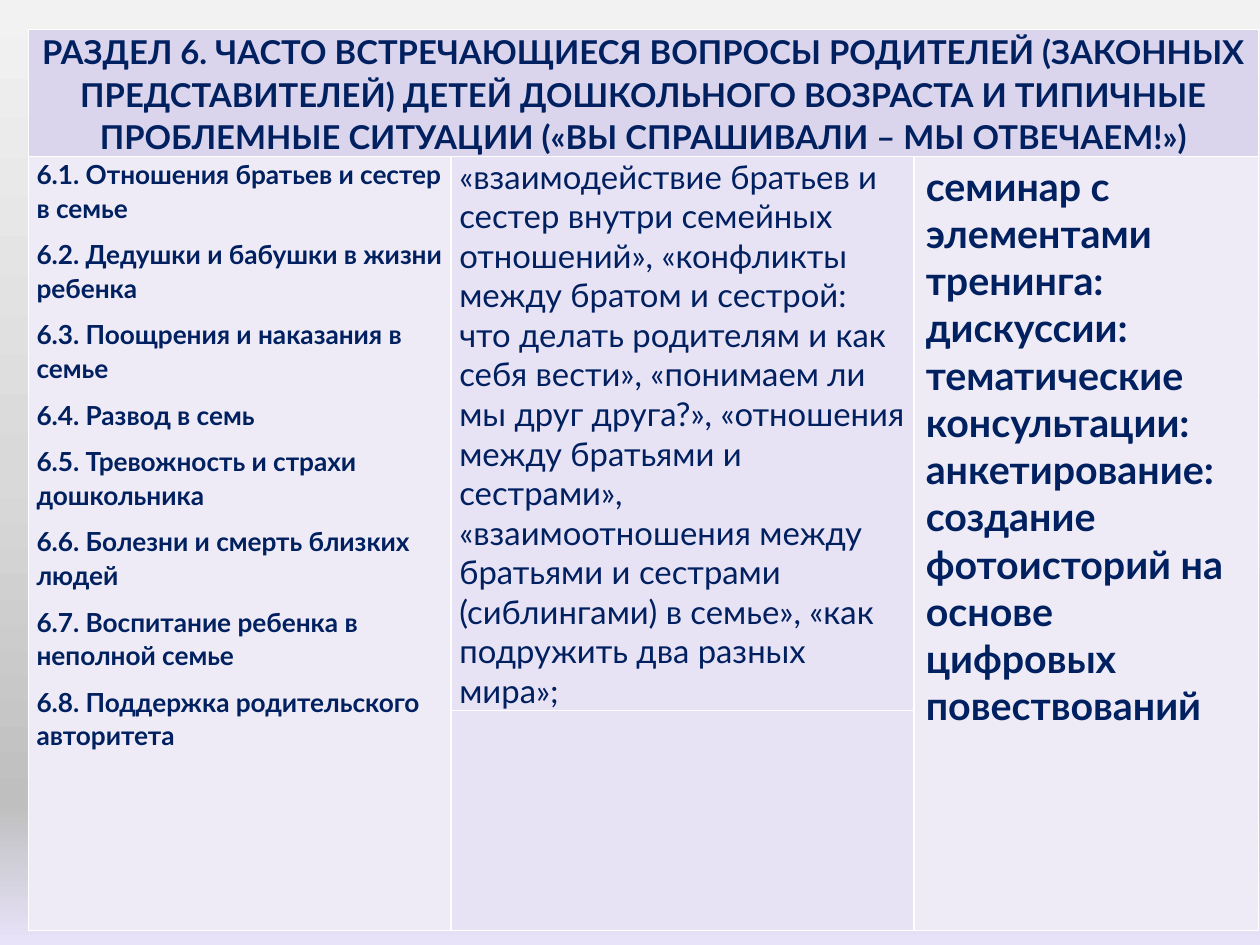
"""Builds the slide with section 6 of the programme for parents of preschoolers."""
from dataclasses import dataclass
from typing import Optional

from lxml import etree
from pptx import Presentation
from pptx.dml.color import RGBColor
from pptx.enum.text import PP_ALIGN
from pptx.oxml.ns import qn
from pptx.util import Inches, Pt

LEFT, CENTER, JUSTIFY = PP_ALIGN.LEFT, PP_ALIGN.CENTER, PP_ALIGN.JUSTIFY
FONT = "Lato"
COLORS = {"text": "002060", "header": "DAD5ED", "outer": "EEEBF6",
          "middle": "E8E2F5", "border": "FFFFFF"}
BACKDROP = ((0, "F2F2F2"), (50, "D9D9D9"), (85, "BFBFBF"), (100, "E8E3F9"))
SLIDE_W, SLIDE_H = Inches(10.67), Inches(8)
TABLE_LEFT, TABLE_TOP = Inches(0.24), Inches(0.25)
COLUMNS = (3.58, 3.92, 2.92)
ROWS = (0.96, 3.28, 1.86)


@dataclass(frozen=True)
class Line:
    text: str
    align: PP_ALIGN = LEFT


@dataclass(frozen=True)
class Block:
    row: int
    col: int
    fill: str
    lines: tuple[Line, ...] = ()
    size: int = 20
    bold: bool = True
    rows: int = 1
    cols: int = 1
    tight: bool = True
    spacing: Optional[float] = None
    after: int = 0


TOPICS = (
    Line("6.1. Отношения братьев и сестер в семье"),
    Line("6.2. Дедушки и бабушки в жизни ребенка"),
    Line("6.3. Поощрения и наказания в семье"),
    Line("6.4. Развод в семь", JUSTIFY),
    Line("6.5. Тревожность и страхи дошкольника"),
    Line("6.6. Болезни и смерть близких людей"),
    Line("6.7. Воспитание ребенка в неполной семье"),
    Line("6.8. Поддержка родительского авторитета"),
)
QUESTIONS = (Line(
    "«взаимодействие братьев и сестер внутри семейных отношений», "
    "«конфликты между братом и сестрой: что делать родителям и как себя вести», "
    "«понимаем ли мы друг друга?», «отношения между братьями и сестрами», "
    "«взаимоотношения между братьями и сестрами (сиблингами) в семье», "
    "«как подружить два разных мира»;"),)
FORMATS = (
    Line("семинар с элементами тренинга:"),
    Line("дискуссии:"),
    Line("тематические консультации:"),
    Line("анкетирование:"),
    Line("создание фотоисторий на основе цифровых повествований"),
)
SECTION = (Line(
    "РАЗДЕЛ 6. ЧАСТО ВСТРЕЧАЮЩИЕСЯ ВОПРОСЫ РОДИТЕЛЕЙ (ЗАКОННЫХ ПРЕДСТАВИТЕЛЕЙ) "
    "ДЕТЕЙ ДОШКОЛЬНОГО ВОЗРАСТА И ТИПИЧНЫЕ ПРОБЛЕМНЫЕ СИТУАЦИИ "
    "(«ВЫ СПРАШИВАЛИ – МЫ ОТВЕЧАЕМ!»)", CENTER),)
BLOCKS = (
    Block(0, 0, "header", SECTION, cols=3, spacing=1.07, after=8),
    Block(1, 0, "outer", TOPICS, size=16, rows=2, spacing=1.07, after=8),
    Block(1, 1, "middle", QUESTIONS, bold=False),
    Block(1, 2, "outer", FORMATS, size=24, rows=2, tight=False),
    Block(2, 1, "middle"),
)


def paint_backdrop(slide) -> None:
    fill = slide.background.fill
    fill.gradient()
    fill.gradient_angle = 270
    stops = slide.element.find(".//" + qn("a:gsLst"))
    for stop in list(stops):
        stops.remove(stop)
    for share, color in BACKDROP:
        stop = etree.SubElement(stops, qn("a:gs"), pos=str(share * 1000))
        etree.SubElement(stop, qn("a:srgbClr"), val=color)


def style_cell(cell, fill: str) -> None:
    properties = cell._tc.get_or_add_tcPr()
    for side in ("lnL", "lnR", "lnT", "lnB"):
        border = etree.SubElement(properties, qn(f"a:{side}"), w=str(Pt(1)))
        solid = etree.SubElement(border, qn("a:solidFill"))
        etree.SubElement(solid, qn("a:srgbClr"), val=COLORS["border"])
    cell.fill.solid()
    cell.fill.fore_color.rgb = RGBColor.from_string(COLORS[fill])


def fill_block(table, block: Block) -> None:
    for row in range(block.row, block.row + block.rows):
        for col in range(block.col, block.col + block.cols):
            style_cell(table.cell(row, col), block.fill)
    cell = table.cell(block.row, block.col)
    if block.rows * block.cols > 1:
        cell.merge(table.cell(block.row + block.rows - 1, block.col + block.cols - 1))
    if block.tight:
        cell.margin_left = cell.margin_right = Inches(0.07)
        cell.margin_top = cell.margin_bottom = 0
    for index, line in enumerate(block.lines):
        frame = cell.text_frame
        paragraph = frame.add_paragraph() if index else frame.paragraphs[0]
        paragraph.alignment = line.align
        paragraph.line_spacing = block.spacing
        paragraph.space_after = Pt(block.after)
        run = paragraph.add_run()
        run.text = line.text
        run.font.name = FONT
        run.font.size = Pt(block.size)
        run.font.bold = block.bold
        run.font.color.rgb = RGBColor.from_string(COLORS["text"])


def main() -> None:
    deck = Presentation()
    deck.slide_width, deck.slide_height = SLIDE_W, SLIDE_H
    slide = deck.slides.add_slide(deck.slide_layouts[6])
    paint_backdrop(slide)
    frame = slide.shapes.add_table(len(ROWS), len(COLUMNS), TABLE_LEFT, TABLE_TOP,
                                   Inches(sum(COLUMNS)), Inches(sum(ROWS)))
    programme = frame.table
    programme.first_row = programme.horz_banding = False
    for column, width in zip(programme.columns, COLUMNS):
        column.width = Inches(width)
    for row, height in zip(programme.rows, ROWS):
        row.height = Inches(height)
    for block in BLOCKS:
        fill_block(programme, block)
    frame.height = Inches(6.92)
    deck.save("out.pptx")


if __name__ == "__main__":
    main()
